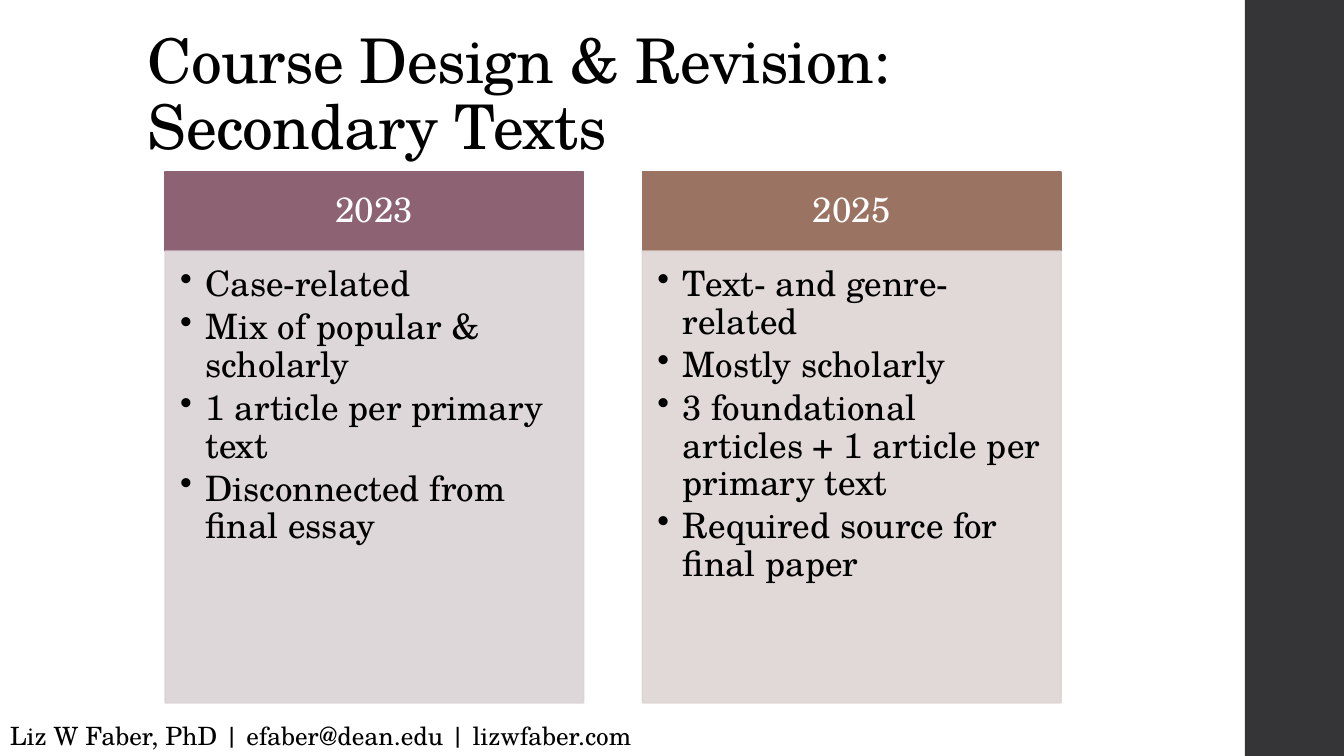
from lxml import etree
from pptx import Presentation
from pptx.dml.color import RGBColor
from pptx.enum.shapes import MSO_SHAPE as Preset
from pptx.enum.text import MSO_ANCHOR as Anchor, PP_ALIGN as Align
from pptx.oxml.ns import qn
from pptx.util import Cm, Pt

FONT = "TeX Gyre Schola"
COLORS = {
    "text": "000000",
    "header_text": "FFFFFF",
    "sidebar": "353537",
    "plum": "8D6374",
    "plum_tint": "DBD3D6",
    "brown": "9B7362",
    "brown_tint": "DED5D3",
}


def add_rectangle(left, top, width, height, color, opacity=100, outlined=True):
    shape = slide.shapes.add_shape(Preset.RECTANGLE, Cm(left), Cm(top), Cm(width), Cm(height))
    shape.shadow.inherit = False
    shape.fill.solid()
    shape.fill.fore_color.rgb = RGBColor.from_string(COLORS[color])
    if outlined:
        shape.line.color.rgb = RGBColor.from_string(COLORS[color])
        shape.line.width = Pt(1.1)
    else:
        shape.line.fill.background()
    if opacity < 100:
        for color_element in shape._element.spPr.iter(qn("a:srgbClr")):
            etree.SubElement(color_element, qn("a:alpha"), val=str(opacity * 1000))
    return shape


def write_text(shape, lines, size, color="text", align=Align.LEFT, anchor=Anchor.TOP,
               insets=(0.25, 0.13, 0.25, 0.13), line_spacing=1.0, space_after=0,
               bulleted=False, tracking=0):
    frame = shape.text_frame
    frame.word_wrap = True
    frame.vertical_anchor = anchor
    frame.margin_left, frame.margin_top, frame.margin_right, frame.margin_bottom = map(Cm, insets)
    for index, line in enumerate(lines):
        paragraph = frame.paragraphs[0] if index == 0 else frame.add_paragraph()
        paragraph.text = line
        paragraph.alignment = align
        paragraph.line_spacing = line_spacing
        paragraph.space_after = Pt(space_after)
        if bulleted:
            properties = paragraph._p.get_or_add_pPr()
            properties.set("marL", str(Cm(0.64)))
            properties.set("indent", str(-Cm(0.64)))
            etree.SubElement(properties, qn("a:buChar"), char="•")
        for run in paragraph.runs:
            run.font.name = FONT
            run.font.size = Pt(size)
            run.font.color.rgb = RGBColor.from_string(COLORS[color])
            if tracking:
                run._r.get_or_add_rPr().set("spc", str(tracking))


presentation = Presentation()
presentation.slide_width = Cm(33.87)
presentation.slide_height = Cm(19.05)
slide = presentation.slides.add_slide(presentation.slide_layouts[6])

add_rectangle(31.37, 0, 2.54, 19.05, "sidebar", outlined=False)

title = slide.shapes.add_textbox(Cm(3.48), Cm(0.56), Cm(26.92), Cm(3.68))
write_text(title, ["Course Design & Revision:\vSecondary Texts"], 44,
           anchor=Anchor.BOTTOM, line_spacing=0.9, tracking=-50)

courses = [
    ("2023", "plum", [
        "Case-related",
        "Mix of popular & scholarly",
        "1 article per primary text",
        "Disconnected from final essay",
    ]),
    ("2025", "brown", [
        "Text- and genre- related",
        "Mostly scholarly",
        "3 foundational articles + 1 article per primary text",
        "Required source for final paper",
    ]),
]
column_left, column_pitch, column_width = 4.16, 12.03, 10.55
header_top, header_height, body_height = 4.33, 2.0, 11.38

for index, (year, color, points) in enumerate(courses):
    left = column_left + index * column_pitch
    header = add_rectangle(left, header_top, column_width, header_height, color)
    write_text(header, [year], 25, color="header_text", align=Align.CENTER,
               anchor=Anchor.MIDDLE, insets=(0.48, 0.28, 0.48, 0.28), line_spacing=0.9)
    body = add_rectangle(left, header_top + header_height, column_width, body_height,
                         f"{color}_tint", opacity=90)
    write_text(body, points, 25, insets=(0.38, 0.38, 0.48, 0.56), line_spacing=0.9,
               space_after=3.75, bulleted=True)

footer = slide.shapes.add_textbox(Cm(0), Cm(18.03), Cm(17.63), Cm(1.02))
write_text(footer, ["Liz W Faber, PhD | efaber@dean.edu | lizwfaber.com"], 18)

presentation.save("out.pptx")
